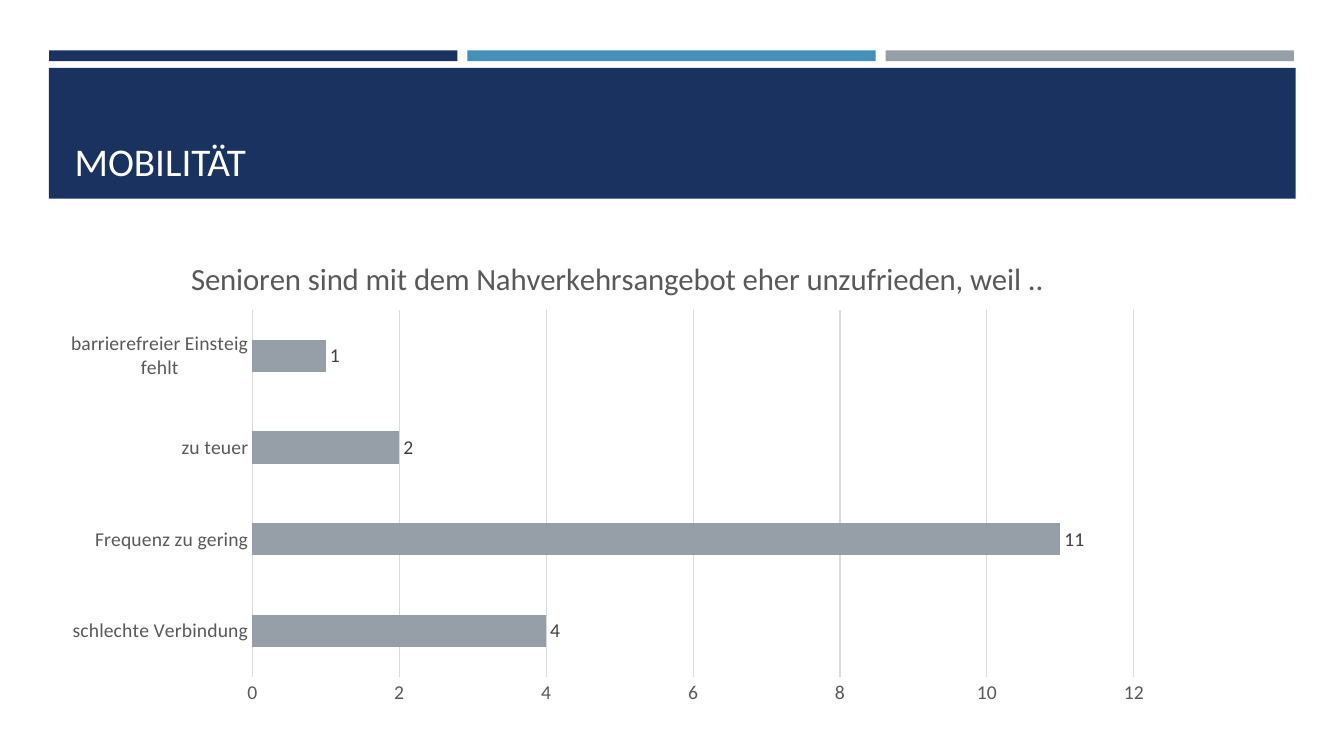
from lxml.etree import SubElement as Sub
from pptx import Presentation
from pptx.chart.data import CategoryChartData as Data
from pptx.dml.color import RGBColor as Rgb
from pptx.enum.chart import XL_CHART_TYPE as Kind
from pptx.enum.chart import XL_LABEL_POSITION as Spot
from pptx.enum.chart import XL_TICK_MARK as Tick
from pptx.enum.shapes import MSO_SHAPE as Shape
from pptx.enum.text import MSO_ANCHOR as Anchor
from pptx.oxml.ns import qn
from pptx.util import Cm, Pt

FONT = "Calibri"
HEX = {
    "navy": "1A3260",
    "blue": "4590B8",
    "gray": "969FA7",
    "white": "FFFFFF",
    "text": "595959",
    "label": "404040",
    "grid": "D9D9D9",
}


def color(name):
    return Rgb.from_string(HEX[name])


def style(font, size, tint):
    font.name = FONT
    font.size = Pt(size)
    font.bold = False
    font.color.rgb = color(tint)


def add_bar(slide, left, top, width, height, tint):
    bar = slide.shapes.add_shape(
        Shape.RECTANGLE, Cm(left), Cm(top), Cm(width), Cm(height))
    bar.shadow.inherit = False
    bar.fill.solid()
    bar.fill.fore_color.rgb = color(tint)
    bar.line.fill.background()


def add_title(slide, text):
    box = slide.shapes.add_textbox(Cm(1.63), Cm(1.96), Cm(30.63), Cm(2.82))
    frame = box.text_frame
    frame.word_wrap = True
    frame.vertical_anchor = Anchor.BOTTOM
    head = frame.paragraphs[0]
    head.text = text
    style(head.font, 28, "white")


def place(node, index, inner=False, **parts):
    old = node.find(qn("c:layout"))
    if old is not None:
        node.remove(old)
    layout = Sub(node, qn("c:layout"))
    node.insert(index, layout)
    manual = Sub(layout, qn("c:manualLayout"))
    if inner:
        Sub(manual, qn("c:layoutTarget"), val="inner")
    for mode in ("xMode", "yMode"):
        Sub(manual, qn(f"c:{mode}"), val="edge")
    for key, value in parts.items():
        Sub(manual, qn(f"c:{key}"), val=str(value))


def rule(line):
    line.color.rgb = color("grid")
    line.width = Pt(0.75)


def add_chart(slide, title, rows):
    data = Data()
    data.categories = [name for name, count in rows]
    data.add_series("Series 1", [count for name, count in rows])
    chart = slide.shapes.add_chart(
        Kind.BAR_CLUSTERED, Cm(1.3), Cm(5.72), Cm(28.12), Cm(12.32), data).chart
    style(chart.font, 14, "text")
    chart.has_legend = False

    chart.has_title = True
    head = chart.chart_title.text_frame.paragraphs[0]
    head.text = title
    style(head.font, 22, "text")
    chart.chart_title.include_in_layout = False
    place(chart.chart_title.format.line and chart.element.find(".//" + qn("c:title")),
          1, x=0.12, y=0.05)
    place(chart.element.find(".//" + qn("c:plotArea")),
          0, True, x=0.18, y=0.17, w=0.79, h=0.75)

    for axis in (chart.category_axis, chart.value_axis):
        axis.major_tick_mark = axis.minor_tick_mark = Tick.NONE
        style(axis.tick_labels.font, 14, "text")
    rule(chart.category_axis.format.line)
    scale = chart.value_axis
    scale.minimum_scale, scale.maximum_scale, scale.major_unit = 0, 12, 2
    scale.format.line.fill.background()
    scale.has_major_gridlines = True
    rule(scale.major_gridlines.format.line)

    plot = chart.plots[0]
    plot.gap_width = 182
    plot.vary_by_categories = False
    bars = plot.series[0]
    bars.format.fill.solid()
    bars.format.fill.fore_color.rgb = color("gray")
    labels = bars.data_labels
    labels.show_value = True
    labels.position = Spot.OUTSIDE_END
    style(labels.font, 14, "label")


def main():
    deck = Presentation()
    deck.slide_width, deck.slide_height = Cm(33.87), Cm(19.05)
    slide = deck.slides.add_slide(deck.slide_layouts[6])
    for index, tint in enumerate(("navy", "blue", "gray")):
        add_bar(slide, 1.24 + index * 10.54, 1.27, 10.29, 0.27, tint)
    add_bar(slide, 1.23, 1.71, 31.42, 3.3, "navy")
    add_title(slide, "MOBILITÄT")
    add_chart(slide, "Senioren sind mit dem Nahverkehrsangebot eher unzufrieden, weil ..", [
        ("schlechte Verbindung", 4),
        ("Frequenz zu gering", 11),
        ("zu teuer", 2),
        ("barrierefreier Einsteig fehlt", 1),
    ])
    deck.save("out.pptx")


if __name__ == "__main__":
    main()
